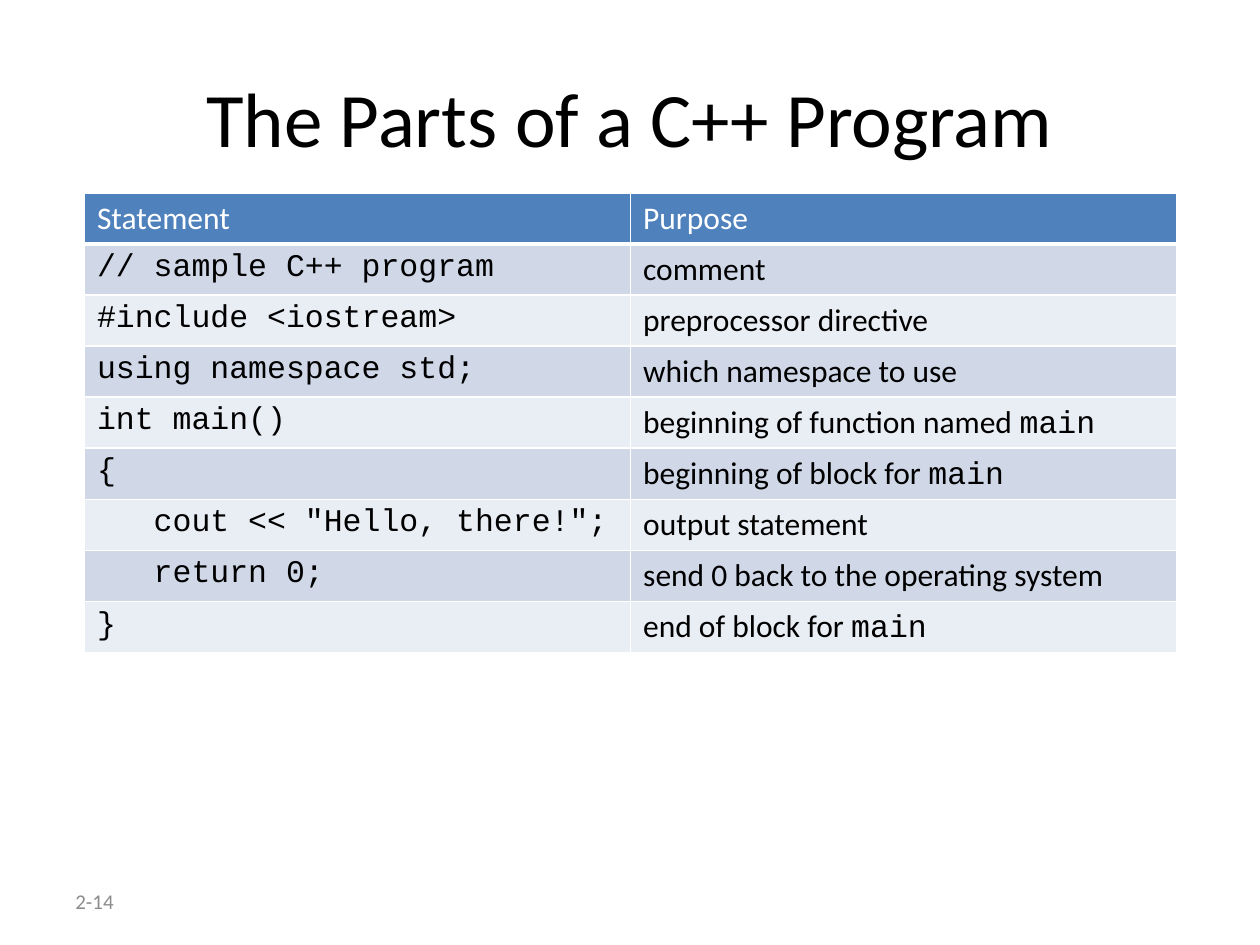
import pptx
import pptx.dml.color
import pptx.enum.text
import pptx.oxml
import pptx.oxml.ns
import pptx.util
from pptx.util import Inches

RGBColor = pptx.dml.color.RGBColor
BLACK = RGBColor(0x00, 0x00, 0x00)
WHITE = RGBColor(0xFF, 0xFF, 0xFF)
GRAY = RGBColor(0x8C, 0x8C, 0x8C)
HEADER_BLUE = RGBColor(0x4F, 0x81, 0xBD)
BAND_DARK = RGBColor(0xD0, 0xD8, 0xE8)
BAND_LIGHT = RGBColor(0xE9, 0xED, 0xF4)

BODY = "Calibri"
CODE = "Courier New"

HEADINGS = ("Statement", "Purpose")
# Each purpose is plain text, with the code word that ends it, if any.
PROGRAM_PARTS = [
    ("// sample C++ program", "comment", ""),
    ("#include <iostream>", "preprocessor directive", ""),
    ("using namespace std;", "which namespace to use", ""),
    ("int main()", "beginning of function named ", "main"),
    ("{", "beginning of block for ", "main"),
    ('   cout << "Hello, there!";', "output statement", ""),
    ("   return 0;", "send 0 back to the operating system", ""),
    ("}", "end of block for ", "main"),
]


class SlideBuilder:
    def __init__(self, prs):
        self.s = prs.slides.add_slide(prs.slide_layouts[6])
        self.table_size = 18

    def run(self, p, text, size, color, font=BODY):
        r = p.add_run()
        r.text = text
        r.font.name = font
        r.font.size = pptx.util.Pt(size)
        r.font.bold = False
        r.font.color.rgb = color

    def text(self, left, top, width, height, text, size, color, align):
        sp = self.s.shapes.add_textbox(
            Inches(left), Inches(top), Inches(width), Inches(height))
        tf = sp.text_frame
        tf.word_wrap = True
        tf.vertical_anchor = pptx.enum.text.MSO_ANCHOR.MIDDLE
        p = tf.paragraphs[0]
        p.alignment = align
        self.run(p, text, size, color)

    def borders(self, cell, bottom):
        """Draw white cell borders, 1 pt wide except for the bottom one."""
        tcPr = cell._tc.get_or_add_tcPr()
        widths = {"lnL": 1, "lnR": 1, "lnT": 1, "lnB": bottom}
        for i, (side, width) in enumerate(widths.items()):
            tcPr.insert(i, pptx.oxml.parse_xml(
                f'<a:{side} {pptx.oxml.ns.nsdecls("a")} w="{pptx.util.Pt(width)}">'
                f'<a:solidFill><a:srgbClr val="{WHITE}"/></a:solidFill></a:{side}>'))

    def cell(self, cell, runs, fill, color=BLACK, bottom=1):
        cell.fill.solid()
        cell.fill.fore_color.rgb = fill
        self.borders(cell, bottom)
        p = cell.text_frame.paragraphs[0]
        for text, font in runs:
            self.run(p, text, self.table_size, color, font)

    def table(self, left, top, width, height, headings, parts):
        table = self.s.shapes.add_table(
            len(parts) + 1, len(headings),
            Inches(left), Inches(top), Inches(width), Inches(height)).table
        for col, heading in enumerate(headings):
            self.cell(table.cell(0, col), [(heading, BODY)],
                      HEADER_BLUE, WHITE, bottom=3)
        for row, (statement, purpose, code) in enumerate(parts, start=1):
            fill = BAND_DARK if row % 2 else BAND_LIGHT
            purpose_runs = [(purpose, BODY)]
            if code:
                purpose_runs.append((code, CODE))
            self.cell(table.cell(row, 0), [(statement, CODE)], fill)
            self.cell(table.cell(row, 1), purpose_runs, fill)


def main():
    prs = pptx.Presentation()
    prs.slide_width = Inches(10)
    prs.slide_height = Inches(7.5)
    align = pptx.enum.text.PP_ALIGN

    slide = SlideBuilder(prs)
    slide.text(0.5, 0.3, 9, 1.25, "The Parts of a C++ Program", 44, BLACK, align.CENTER)
    slide.text(0.5, 6.95, 2.33, 0.4, "2-14", 12, GRAY, align.LEFT)
    slide.table(0.67, 1.53, 8.67, 3.65, HEADINGS, PROGRAM_PARTS)
    prs.save("out.pptx")


if __name__ == "__main__":
    main()
